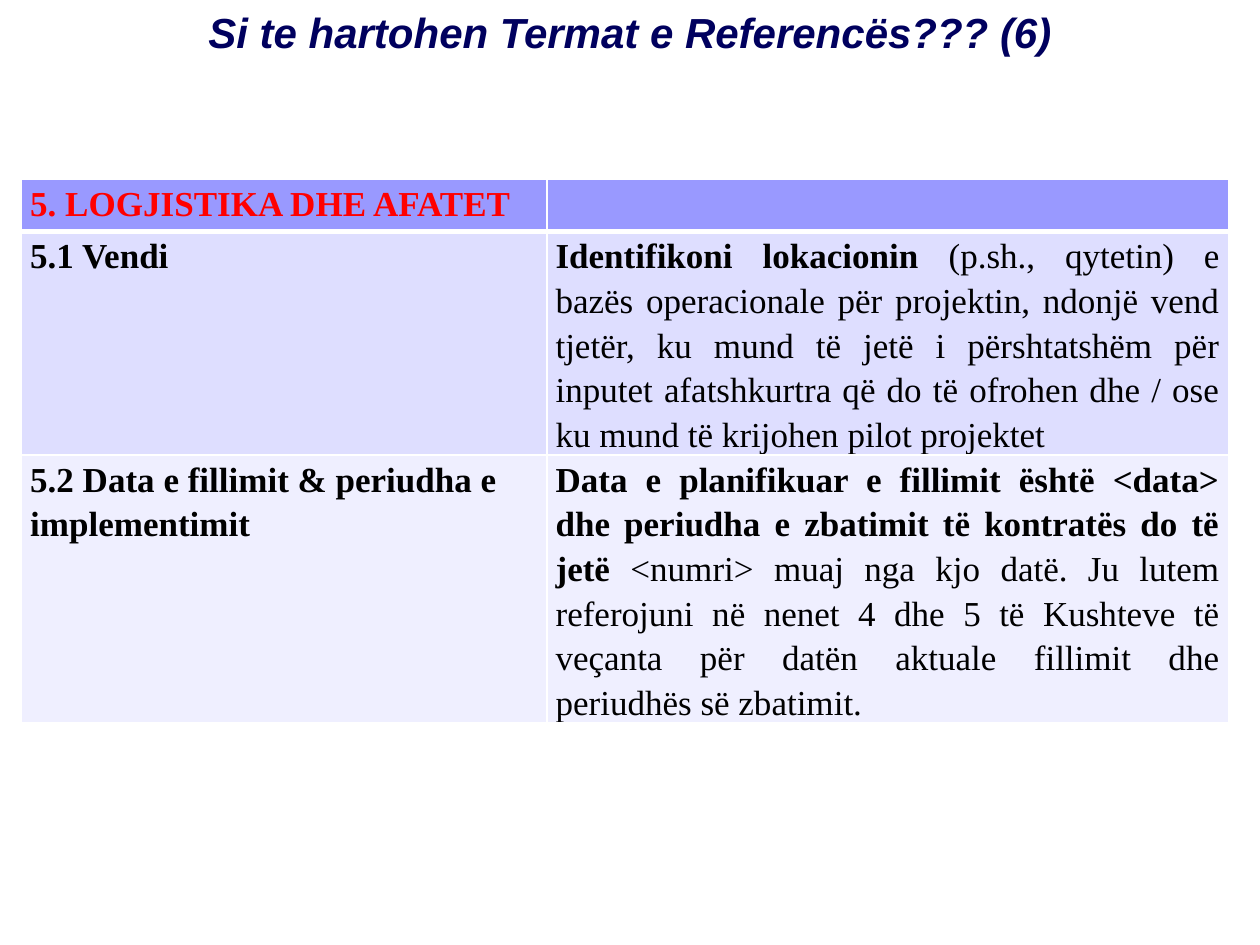
from lxml import etree
from pptx import Presentation
from pptx.dml import color
from pptx.enum import text
from pptx.oxml import ns
from pptx.util import Inches, Pt

ROWS = [
    ("9999FF", 0.42, "5. LOGJISTIKA DHE AFATET", "", ""),
    ("DEDEFF", 1.77, "5.1 Vendi", "Identifikoni lokacionin",
     " (p.sh., qytetin) e bazës operacionale për projektin, ndonjë vend tjetër, "
     "ku mund të jetë i përshtatshëm për inputet afatshkurtra që do të ofrohen "
     "dhe / ose ku mund të krijohen pilot projektet"),
    ("EFEFFF", 2.12, "5.2 Data e fillimit & periudha e implementimit",
     "Data e planifikuar e fillimit është <data> dhe periudha e zbatimit të "
     "kontratës do të jetë",
     " <numri> muaj nga kjo datë. Ju lutem referojuni në nenet 4 dhe 5 të "
     "Kushteve të veçanta për datën aktuale fillimit dhe periudhës së zbatimit."),
]
COLUMN_WIDTHS = (4.17, 5.41)


def rgb(value):
    return color.RGBColor.from_string(value)


def set_font(font, name, size, value):
    font.name = name
    font.size = Pt(size)
    font.color.rgb = rgb(value)


def add_title(page, wording):
    box = page.shapes.title
    box.left, box.top, box.width, box.height = (
        Inches(side) for side in (0, 0, 10, 1.05))
    frame = box.text_frame
    frame.text = wording
    frame.word_wrap = True
    frame.auto_size = text.MSO_AUTO_SIZE.NONE
    frame.vertical_anchor = text.MSO_ANCHOR.TOP
    para = frame.paragraphs[0]
    para.alignment = text.PP_ALIGN.CENTER
    set_font(para.font, "Arial", 24, "00005E")
    para.font.bold = para.font.italic = True


def add_borders(cell, top, bottom):
    properties = cell._tc.get_or_add_tcPr()
    for side, width in (("L", 1), ("R", 1), ("T", top), ("B", bottom)):
        line = etree.SubElement(properties, ns.qn("a:ln" + side), w=str(Pt(width)))
        fill = etree.SubElement(line, ns.qn("a:solidFill"))
        etree.SubElement(fill, ns.qn("a:srgbClr"), val="FFFFFF")


def write_cell(cell, strong, plain, ink, alignment):
    cell.margin_left = cell.margin_right = Inches(0.07)
    cell.margin_top = cell.margin_bottom = 0
    para = cell.text_frame.paragraphs[0]
    para.alignment = alignment
    para.line_spacing = 1.15
    set_font(para.font, "Times New Roman", 20, ink)
    for wording, bold in ((strong, True), (plain, False)):
        if wording:
            span = para.add_run()
            span.text = wording
            span.font.bold = bold


def add_terms_table(page):
    table = page.shapes.add_table(
        len(ROWS), len(COLUMN_WIDTHS), Inches(0.17), Inches(1.42),
        Inches(sum(COLUMN_WIDTHS)), Inches(sum(row[1] for row in ROWS))).table
    for column, width in zip(table.columns, COLUMN_WIDTHS):
        column.width = Inches(width)
    for index, (fill, height, heading, strong, plain) in enumerate(ROWS):
        table.rows[index].height = Inches(height)
        for cell in table.rows[index].cells:
            add_borders(cell, 3 if index == 1 else 1, 3 if index == 0 else 1)
            cell.fill.solid()
            cell.fill.fore_color.rgb = rgb(fill)
        ink = "FF0000" if index == 0 else "000000"
        write_cell(table.cell(index, 0), heading, "", ink, text.PP_ALIGN.LEFT)
        write_cell(table.cell(index, 1), strong, plain, ink, text.PP_ALIGN.JUSTIFY)


def main():
    deck = Presentation()
    deck.slide_width, deck.slide_height = Inches(10), Inches(7.5)
    page = deck.slides.add_slide(deck.slide_layouts[5])
    add_title(page, "Si te hartohen Termat e Referencës??? (6)")
    add_terms_table(page)
    deck.save("out.pptx")


if __name__ == "__main__":
    main()
